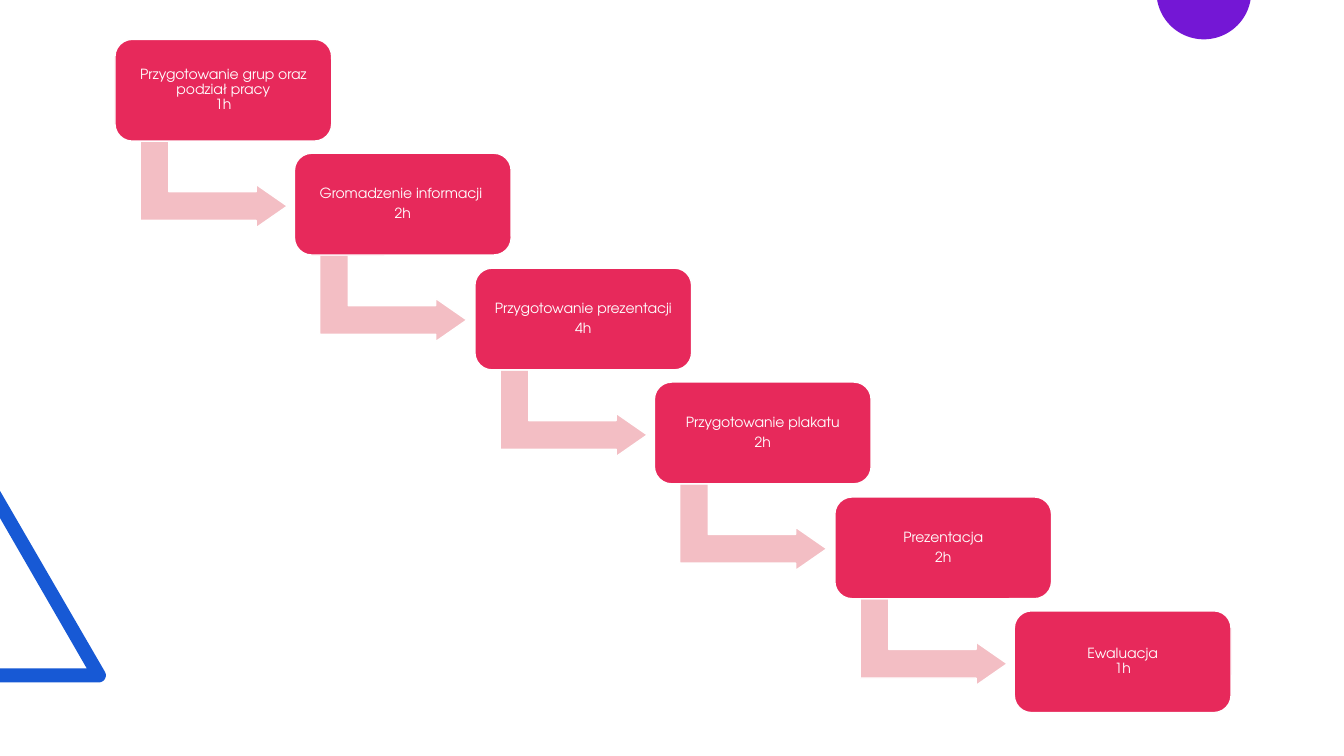
import math

import pptx
import pptx.dml.color
import pptx.enum.shapes
import pptx.enum.text
import pptx.oxml.ns
import pptx.util
from lxml import etree

PX = 9144
FONT = "TeX Gyre Adventor"
WHITE, CRIMSON, PINK, BLUE, PURPLE = "FFFFFF", "E7295B", "F3BEC4", "1759D5", "7417D5"
STEPS = [
    ["Przygotowanie grup oraz podział pracy\n1h"],
    ["Gromadzenie informacji ", "2h"],
    ["Przygotowanie prezentacji", "4h"],
    ["Przygotowanie plakatu", "2h"],
    ["Prezentacja", "2h"],
    ["Ewaluacja\n1h"],
]
FIRST_LEFT, FIRST_TOP, LAST_LEFT, LAST_TOP = 114, 39, 1006, 606


def px(length):
    """Turn px into EMU."""
    return pptx.util.Emu(round(length * PX))


def color(value):
    """Turn a hex string into a colour."""
    return pptx.dml.color.RGBColor.from_string(value)


def paint(shape, fill, line=None):
    """Set the fill and outline of a shape and drop its shadow."""
    shape.shadow.inherit = False
    shape.fill.solid()
    shape.fill.fore_color.rgb = color(fill)
    if line:
        shape.line.color.rgb = color(line)
        shape.line.width = pptx.util.Pt(1)
    else:
        shape.line.fill.background()


def add_preset(slide, kind, box, adjustments, fill):
    """Add a preset shape with a white outline."""
    shape = slide.shapes.add_shape(kind, *map(px, box))
    for index, value in enumerate(adjustments):
        shape.adjustments[index] = value
    paint(shape, fill, WHITE)
    return shape


def write_text(shape, paragraphs, size=10, font=FONT, fill=WHITE, space_after=3.5):
    """Write centred paragraphs into a shape."""
    frame = shape.text_frame
    frame.word_wrap = True
    frame.vertical_anchor = pptx.enum.text.MSO_ANCHOR.MIDDLE
    frame.margin_left = frame.margin_right = px(7)
    frame.margin_top = frame.margin_bottom = px(4)
    for index, text in enumerate(paragraphs):
        paragraph = frame.add_paragraph() if index else frame.paragraphs[0]
        paragraph.text = text
        paragraph.alignment = pptx.enum.text.PP_ALIGN.CENTER
        paragraph.line_spacing = 0.9
        paragraph.space_after = pptx.util.Pt(space_after)
        for run in paragraph.runs:
            run.font.size = pptx.util.Pt(size)
            run.font.name = font
            run.font.color.rgb = color(fill)
        for line_break in paragraph._p.findall(pptx.oxml.ns.qn("a:br")):
            etree.SubElement(line_break, pptx.oxml.ns.qn("a:rPr"), sz=str(size * 100))


def arc(center_x, center_y, radius, start, end, pieces):
    """List points along an arc, with angles in degrees clockwise from the right."""
    angles = [math.radians(start + (end - start) * i / pieces) for i in range(pieces + 1)]
    return [(center_x + radius * math.cos(a), center_y + radius * math.sin(a)) for a in angles]


def add_outline(slide, points, fill):
    """Add a closed freeform through the points."""
    start, *rest = [(px(x), px(y)) for x, y in points]
    builder = slide.shapes.build_freeform(*start, scale=1.0)
    builder.add_line_segments(rest, close=True)
    paint(builder.convert_to_shape(), fill)


def add_step(slide, index, paragraphs):
    """Add one step of the staircase and the arrow to the next step."""
    gaps = len(STEPS) - 1
    left = round(FIRST_LEFT + (LAST_LEFT - FIRST_LEFT) * index / gaps)
    top = round(FIRST_TOP + (LAST_TOP - FIRST_TOP) * index / gaps)
    kinds = pptx.enum.shapes.MSO_SHAPE
    if index < gaps:
        arrow = add_preset(slide, kinds.BENT_UP_ARROW, (left + 55, top + 71, 86, 146),
                           (0.33, 0.25, 0.36), PINK)
        arrow.rotation = 90
    card = add_preset(slide, kinds.ROUNDED_RECTANGLE, (left, top, 215, 101), (0.17,), CRIMSON)
    write_text(card, paragraphs)


def main():
    """Build the slide and save it."""
    presentation = pptx.Presentation()
    presentation.slide_width, presentation.slide_height = px(1333), px(750)
    slide = presentation.slides.add_slide(presentation.slide_layouts[6])
    triangle = [(0, 677), (0, 663), (86, 663), (0, 514), (0, 487)]
    add_outline(slide, triangle + arc(98, 670, 7, -30, 90, 12), BLUE)
    add_outline(slide, arc(1194, -8, 47, 10, 170, 80), PURPLE)
    for index, paragraphs in enumerate(STEPS):
        add_step(slide, index, paragraphs)
    presentation.save("out.pptx")


if __name__ == "__main__":
    main()
